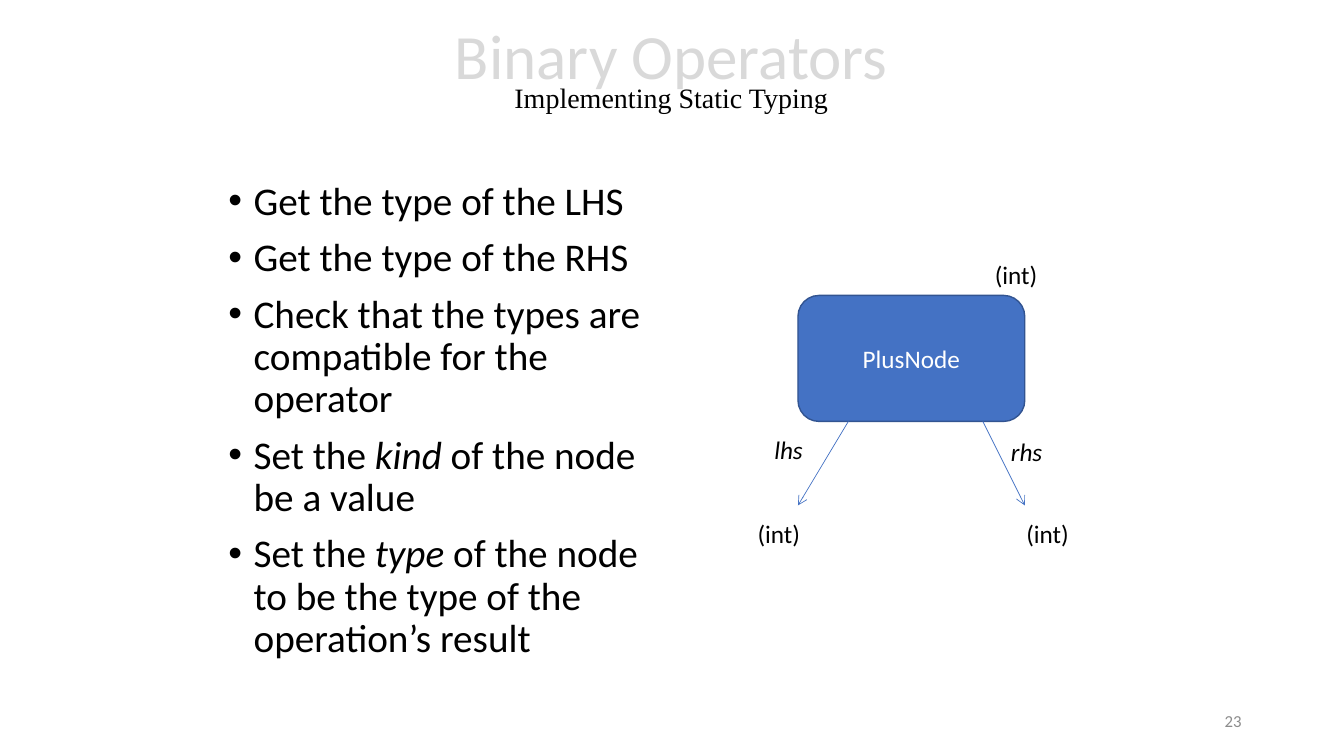
import pptx
import pptx.util
import pptx.dml.color
import pptx.enum.shapes
import pptx.enum.text
import pptx.oxml
from lxml import etree

Pt = pptx.util.Pt
ALIGN = pptx.enum.text.PP_ALIGN
ANCHOR = pptx.enum.text.MSO_ANCHOR

# Content
TITLE = ("Binary Operators", 45, "Calibri", "pale")
SUBTITLE = ("Implementing Static Typing", 20, "Times New Roman", "black")
STEPS = [  # each step is a list of (text, italic)
    [("Get the type of the LHS", False)],
    [("Get the type of the RHS", False)],
    [("Check that the types are compatible for the operator", False)],
    [("Set the ", False), ("kind ", True), ("of the node be a value", False)],
    [("Set the ", False), ("type ", True),
     ("of the node to be the type of the operation’s result", False)],
]
NODE = "PlusNode"
PAGE = "23"
COLORS = {"pale": "D9D9D9", "black": "000000", "gray": "8C8C8C",
          "white": "FFFFFF", "blue": "4472C4", "edge": "325491"}

# Layout: left, top, width, height
TITLE_BOX = (169, 1.5, 621, 104.5)
STEPS_BOX = (156, 126, 312, 356.5)
PAGE_BOX = (678, 500.5, 216, 28.5)
NODE_BOX = (570, 211, 162, 90)
ARROW_INSET, ARROW_DROP = (36, 30), 60
LABEL_HEIGHT = 29
LABELS = [  # text, italic, left, top, width
    ("(int)", False, 703.5, 181.5, 45.5),
    ("lhs", True, 546, 307, 35.5),
    ("rhs", True, 715, 308, 37.5),
    ("(int)", False, 534, 367, 45.5),
    ("(int)", False, 726, 367, 45.5),
]


def rgb(color):
    return pptx.dml.color.RGBColor.from_string(COLORS[color])


def add_run(paragraph, text, size, face="Calibri", color="black", italic=False):
    run = paragraph.add_run()
    run.text = text
    run.font.size, run.font.name, run.font.italic = Pt(size), face, italic
    run.font.color.rgb = rgb(color)


def place(part, box):
    part.left, part.top, part.width, part.height = map(Pt, box)


def add_label(slide, box, text, size, align, anchor, wrap, **style):
    frame = slide.shapes.add_textbox(*map(Pt, box)).text_frame
    frame.word_wrap, frame.vertical_anchor = wrap, anchor
    frame.paragraphs[0].alignment = align
    add_run(frame.paragraphs[0], text, size, **style)


def add_arrow(slide, start, end):
    arrow = slide.shapes.add_connector(
        pptx.enum.shapes.MSO_CONNECTOR.STRAIGHT, *map(Pt, start + end))
    arrow.line.color.rgb = rgb("blue")
    arrow.line.width = Pt(0.5)
    head = etree.SubElement(arrow.line._get_or_add_ln(),
                            pptx.oxml.ns.qn("a:tailEnd"))
    head.set("type", "arrow")
    etree.SubElement(arrow._element.spPr, pptx.oxml.ns.qn("a:effectLst"))


def add_bullet(paragraph):
    properties = paragraph._p.get_or_add_pPr()
    properties.set("marL", str(Pt(18)))
    properties.set("indent", str(-Pt(18)))
    etree.SubElement(properties, pptx.oxml.ns.qn("a:buFont")).set("typeface", "Arial")
    etree.SubElement(properties, pptx.oxml.ns.qn("a:buChar")).set("char", "•")


def main():
    deck = pptx.Presentation()
    deck.slide_width, deck.slide_height = Pt(960), Pt(540)
    slide = deck.slides.add_slide(deck.slide_layouts[1])

    # Title and subtitle
    title = slide.shapes.title
    place(title, TITLE_BOX)
    title.text_frame.auto_size = pptx.enum.text.MSO_AUTO_SIZE.NONE
    title.text_frame.vertical_anchor = ANCHOR.MIDDLE
    heading = title.text_frame.paragraphs[0]
    heading.alignment, heading.line_spacing = ALIGN.CENTER, 0.7
    add_run(heading, *TITLE)
    heading.add_line_break()
    add_run(heading, *SUBTITLE)

    # Steps
    steps = slide.placeholders[1]
    place(steps, STEPS_BOX)
    frame = steps.text_frame
    frame.auto_size = pptx.enum.text.MSO_AUTO_SIZE.NONE
    for number, step in enumerate(STEPS):
        paragraph = frame.add_paragraph() if number else frame.paragraphs[0]
        paragraph.line_spacing, paragraph.space_before = 0.9, Pt(10)
        add_bullet(paragraph)
        for text, italic in step:
            add_run(paragraph, text, 28, italic=italic)

    # Page number
    add_label(slide, PAGE_BOX, PAGE, 12, ALIGN.RIGHT, ANCHOR.MIDDLE, True,
              color="gray")

    # Operator node
    node = slide.shapes.add_shape(
        pptx.enum.shapes.MSO_SHAPE.ROUNDED_RECTANGLE, *map(Pt, NODE_BOX))
    node.shadow.inherit = False
    node.fill.solid()
    node.fill.fore_color.rgb = rgb("blue")
    node.line.color.rgb = rgb("edge")
    node.line.width = Pt(1)
    node.text_frame.vertical_anchor = ANCHOR.MIDDLE
    node.text_frame.paragraphs[0].alignment = ALIGN.CENTER
    add_run(node.text_frame.paragraphs[0], NODE, 18, color="white")

    # Arrows to the operands, ending below the node's corners
    left, top, width, height = NODE_BOX
    bottom, right = top + height, left + width
    left_inset, right_inset = ARROW_INSET
    for start, end in ((left + left_inset, left), (right - right_inset, right)):
        add_arrow(slide, (start, bottom), (end, bottom + ARROW_DROP))

    # Type and operand labels
    for text, italic, x, y, label_width in LABELS:
        add_label(slide, (x, y, label_width, LABEL_HEIGHT), text, 18,
                  ALIGN.LEFT, ANCHOR.TOP, False, italic=italic)

    deck.save("out.pptx")


if __name__ == "__main__":
    main()
